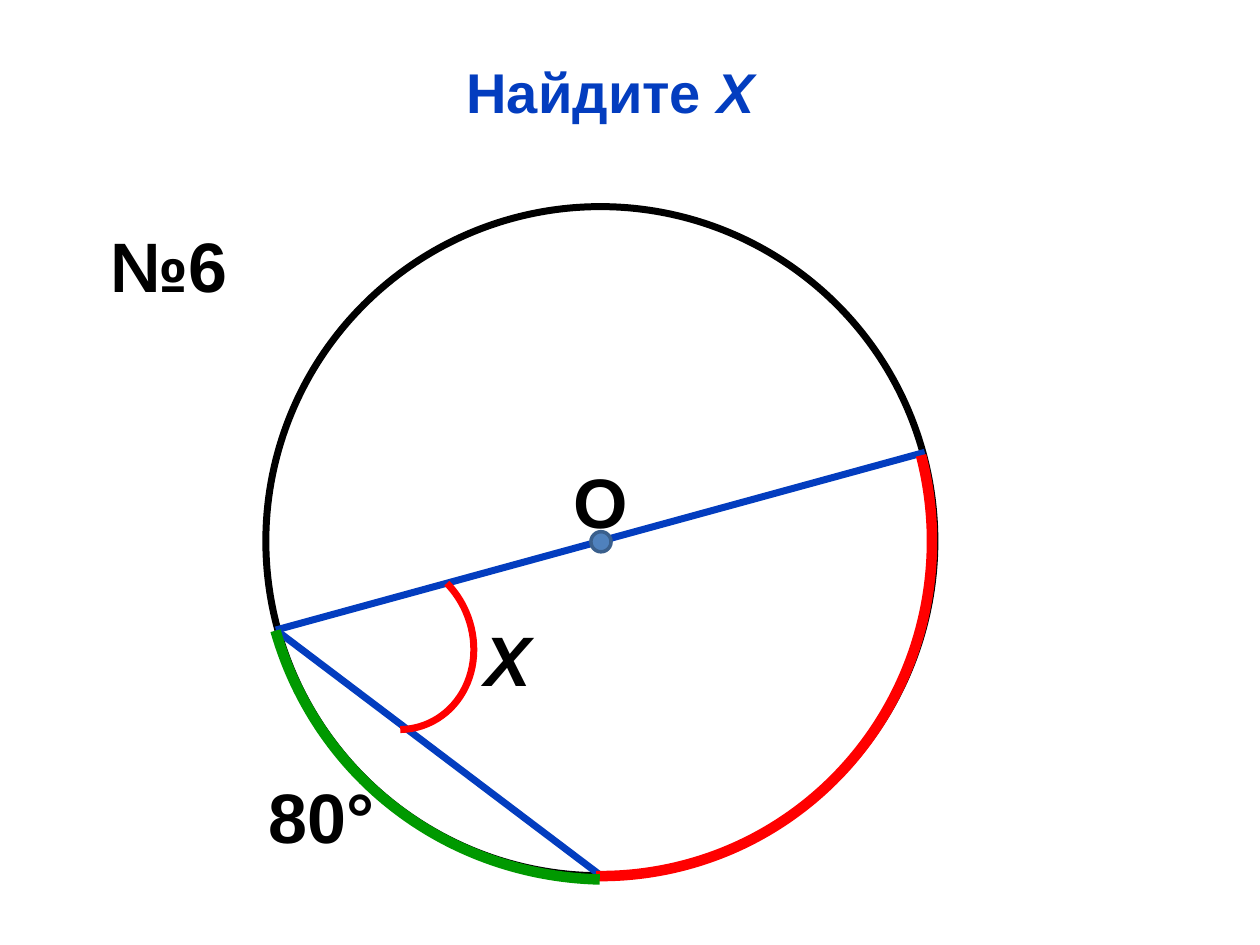
from pptx import Presentation
from pptx.dml.color import RGBColor
from pptx.enum import shapes, text
from pptx.oxml.ns import qn
from pptx.util import Inches, Pt
from lxml import etree

COLORS = {
    "blue": "033DBF", "black": "000000", "white": "FFFFFF", "red": "FF0000",
    "green": "009900", "dot": "4F81BD", "dot_edge": "3A5F8C",
}
FONT = "Arial"


def rgb(name):
    return RGBColor.from_string(COLORS[name])


def format_run(r, size, color, italic=False):
    r.font.name = FONT
    r.font.size = Pt(size)
    r.font.bold = True
    r.font.italic = italic
    r.font.color.rgb = rgb(color)


def set_line(sp, color, width):
    sp.line.color.rgb = rgb(color)
    sp.line.width = Pt(width)


def set_title(s, words, variable):
    title = s.shapes.title
    title.left, title.top = Inches(0.51), Inches(0.36)
    title.width, title.height = Inches(8.67), Inches(0.73)
    tf = title.text_frame
    tf.vertical_anchor = text.MSO_ANCHOR.MIDDLE
    p = tf.paragraphs[0]
    p.alignment = text.PP_ALIGN.CENTER
    for part, italic in ((words, False), (variable, True)):
        r = p.add_run()
        r.text = part
        format_run(r, 32, "blue", italic)


def add_circle(s, left, top, size, fill, edge, width):
    sp = s.shapes.add_shape(shapes.MSO_SHAPE.OVAL, Inches(left), Inches(top),
                            Inches(size), Inches(size))
    sp.shadow.inherit = False
    sp.fill.solid()
    sp.fill.fore_color.rgb = rgb(fill)
    set_line(sp, edge, width)


def add_chord(s, start, end):
    line = s.shapes.add_connector(shapes.MSO_CONNECTOR.STRAIGHT,
                                  *map(Inches, start + end))
    set_line(line, "blue", 4)
    etree.SubElement(line._element.spPr, qn("a:effectLst"))


def add_arc(s, box, rotation, angles, color, width):
    sp = s.shapes.add_shape(shapes.MSO_SHAPE.ARC, *map(Inches, box))
    sp.shadow.inherit = False
    sp.rotation = rotation
    # Degrees to adjustment units: 60000 per degree over 100000
    for i, angle in enumerate(angles):
        sp.adjustments[i] = angle * 0.6
    sp.fill.background()
    set_line(sp, color, width)


def add_label(s, left, top, width, words, italic=False, wrap=False):
    box = s.shapes.add_textbox(Inches(left), Inches(top), Inches(width), Inches(0.77))
    tf = box.text_frame
    tf.word_wrap = wrap
    tf.auto_size = text.MSO_AUTO_SIZE.SHAPE_TO_FIT_TEXT
    tf.text = words
    format_run(tf.paragraphs[0].runs[0], 40, "black", italic)


def main():
    prs = Presentation()
    prs.slide_width, prs.slide_height = Inches(10), Inches(7.5)
    s = prs.slides.add_slide(prs.slide_layouts[5])
    set_title(s, "Найдите ", "Х")

    # Circle with a chord and a diameter from the same vertex
    vertex = (2.19, 5)
    add_circle(s, 2.11, 1.64, 5.31, "white", "black", 4)
    add_chord(s, vertex, (4.77, 6.95))
    add_chord(s, vertex, (7.34, 3.59))

    # Centre point and known arc value
    add_circle(s, 4.69, 4.22, 0.16, "dot", "dot_edge", 2)
    add_label(s, 4.45, 3.59, 0.64, "О")
    add_label(s, 2.03, 6.09, 1.05, "80°")

    # Unknown angle and exercise number
    add_arc(s, (2.49, 4.41, 1.26, 1.39), 336.4, (335.46, 108.82), "red", 4)
    add_label(s, 3.75, 4.84, 1.56, "Х", italic=True, wrap=True)
    add_label(s, 0.78, 1.72, 1.56, "№6", wrap=True)

    # Highlighted arcs of the circle
    add_arc(s, (2.08, 1.57, 5.31, 5.39), 335.2, (10.61, 114.89), "red", 6)
    add_arc(s, (2.15, 1.15, 5.63, 5.9), 45.7, (48.37, 116.24), "green", 6)

    prs.save("out.pptx")


if __name__ == "__main__":
    main()
